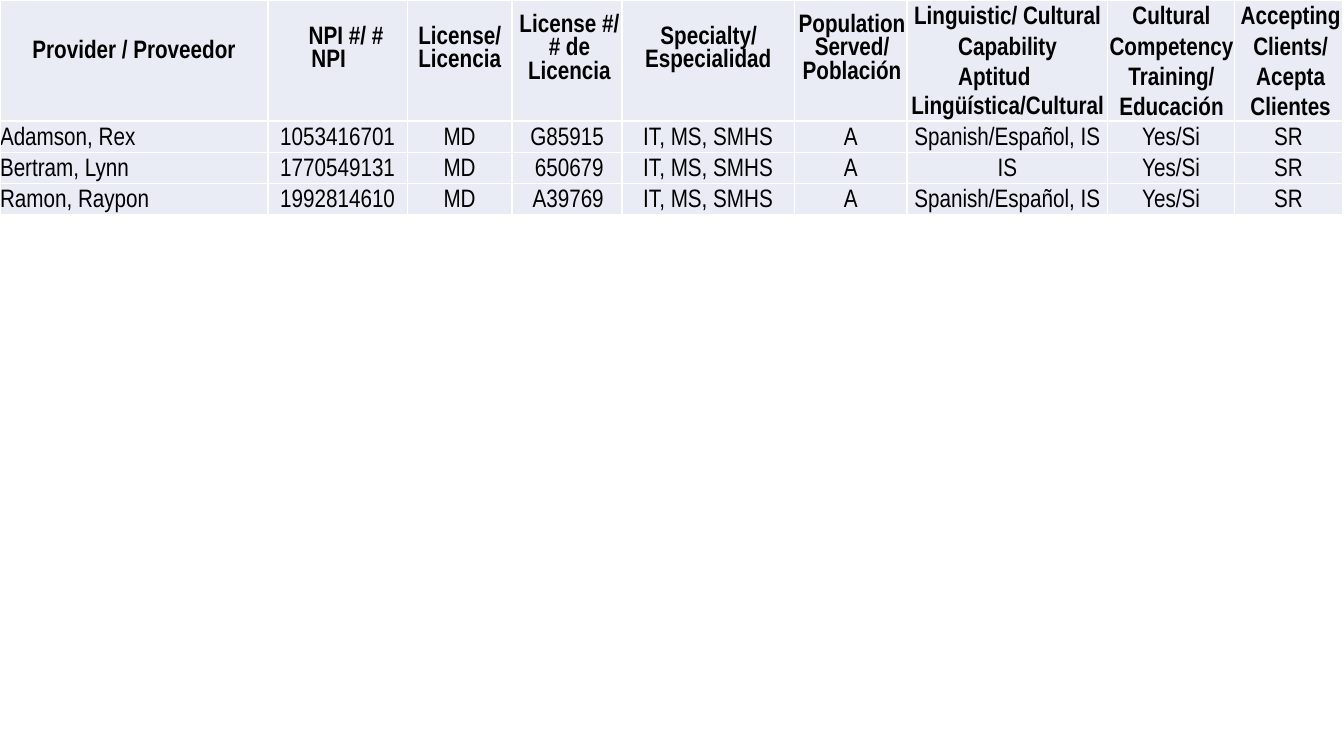
from lxml.etree import SubElement
from pptx import Presentation
from pptx.dml.color import RGBColor
from pptx.enum.text import PP_ALIGN
from pptx.oxml.ns import qn
from pptx.util import Pt

LEFT, MID, RIGHT = PP_ALIGN.LEFT, PP_ALIGN.CENTER, PP_ALIGN.RIGHT
BLACK = RGBColor(0, 0, 0)
WHITE = RGBColor(255, 255, 255)
PALE = RGBColor(0xE9, 0xEB, 0xF5)
FONT = "Arial Narrow"
SIZE = 18
WIDTHS = [191.5, 99.4, 74.9, 78.5, 123.1, 80.6, 143.3, 90.7, 77]
HEIGHTS = [86.4, 22.3, 22.3, 22.3]

# Each heading: top margin, then (text, alignment, left, first indent, line height)
HEADS = [
    (28.5, [("Provider / Proveedor", MID, 0, 0, None)]),
    (18.5, [("NPI #/ # NPI", LEFT, 31, -2, None)]),
    (18.5, [("License/ Licencia", LEFT, 8, 0, None)]),
    (10, [("License #/ # de Licencia", MID, 3.5, 0, None)]),
    (18.5, [("Specialty/ Especialidad", LEFT, 16.5, 11, None)]),
    (10, [("Population Served/ Población", MID, 2, 0, None)]),
    (0, [("Linguistic/ Cultural Capability Aptitud", LEFT, 36.5, -31.5, 21.6),
         ("Lingüística/Cultural", LEFT, 3, 0, 20.6)]),
    (0, [("Cultural Competency Training/ Educación", MID, 0.5, 0, 21.6)]),
    (0, [("Accepting Clients/ Acepta Clientes", MID, 3, 0, 21.6)]),
]
PEOPLE = [
    ("Adamson, Rex", "1053416701", "G85915", "Spanish/Español, IS"),
    ("Bertram, Lynn", "1770549131", "650679", "IS"),
    ("Ramon, Raypon", "1992814610", "A39769", "Spanish/Español, IS"),
]
ALIGNS = [LEFT, MID, MID, RIGHT] + [MID] * 5


def paint(cell):
    """Give a cell its white borders and pale fill."""
    props = cell._tc.get_or_add_tcPr()
    for side in ("a:lnL", "a:lnR", "a:lnT", "a:lnB"):
        line = SubElement(props, qn(side), w=str(Pt(1)))
        solid = SubElement(line, qn("a:solidFill"))
        SubElement(solid, qn("a:srgbClr"), val=str(WHITE))
    cell.fill.solid()
    cell.fill.fore_color.rgb = PALE


def write(cell, parts, bold, top=0, right=0):
    """Fill a cell with paragraphs, one run in each."""
    cell.margin_left = cell.margin_bottom = 0
    cell.margin_top, cell.margin_right = Pt(top), Pt(right)
    frame = cell.text_frame
    for i, (text, align, left, first, pitch) in enumerate(parts):
        para = frame.add_paragraph() if i else frame.paragraphs[0]
        para.alignment = align
        if pitch:
            para.line_spacing = Pt(pitch)
        props = para._p.get_or_add_pPr()
        props.set("marL", str(Pt(left)))
        props.set("indent", str(Pt(first)))
        run = para.add_run()
        run.text = text
        font = run.font
        font.name, font.size, font.bold = FONT, Pt(SIZE), bold
        font.color.rgb = BLACK


def roster(slide, left, top):
    """Place the provider table with its corner at the given point."""
    frame = slide.shapes.add_table(
        len(HEIGHTS), len(WIDTHS), Pt(left), Pt(top),
        Pt(sum(WIDTHS)), Pt(sum(HEIGHTS)))
    table = frame.table
    table.first_row = table.horz_banding = False
    for col, width in zip(table.columns, WIDTHS):
        col.width = Pt(width)
    for row, height in zip(table.rows, HEIGHTS):
        row.height = Pt(height)
    for cell in table.iter_cells():
        paint(cell)
    for c, (pad, parts) in enumerate(HEADS):
        write(table.cell(0, c), parts, True, top=pad)
    for r, (name, npi, code, tongue) in enumerate(PEOPLE, 1):
        texts = [name, npi, "MD", code, "IT, MS, SMHS", "A",
                 tongue, "Yes/Si", "SR"]
        for c, (text, align) in enumerate(zip(texts, ALIGNS)):
            write(table.cell(r, c), [(text, align, 0, 0, 21)], False,
                  right=13 if align == RIGHT else 0)


def main():
    """Build and save the slide."""
    deck = Presentation()
    deck.slide_width, deck.slide_height = Pt(960), Pt(540)
    slide = deck.slides.add_slide(deck.slide_layouts[6])
    roster(slide, 0, 0)
    deck.save("out.pptx")


if __name__ == "__main__":
    main()
